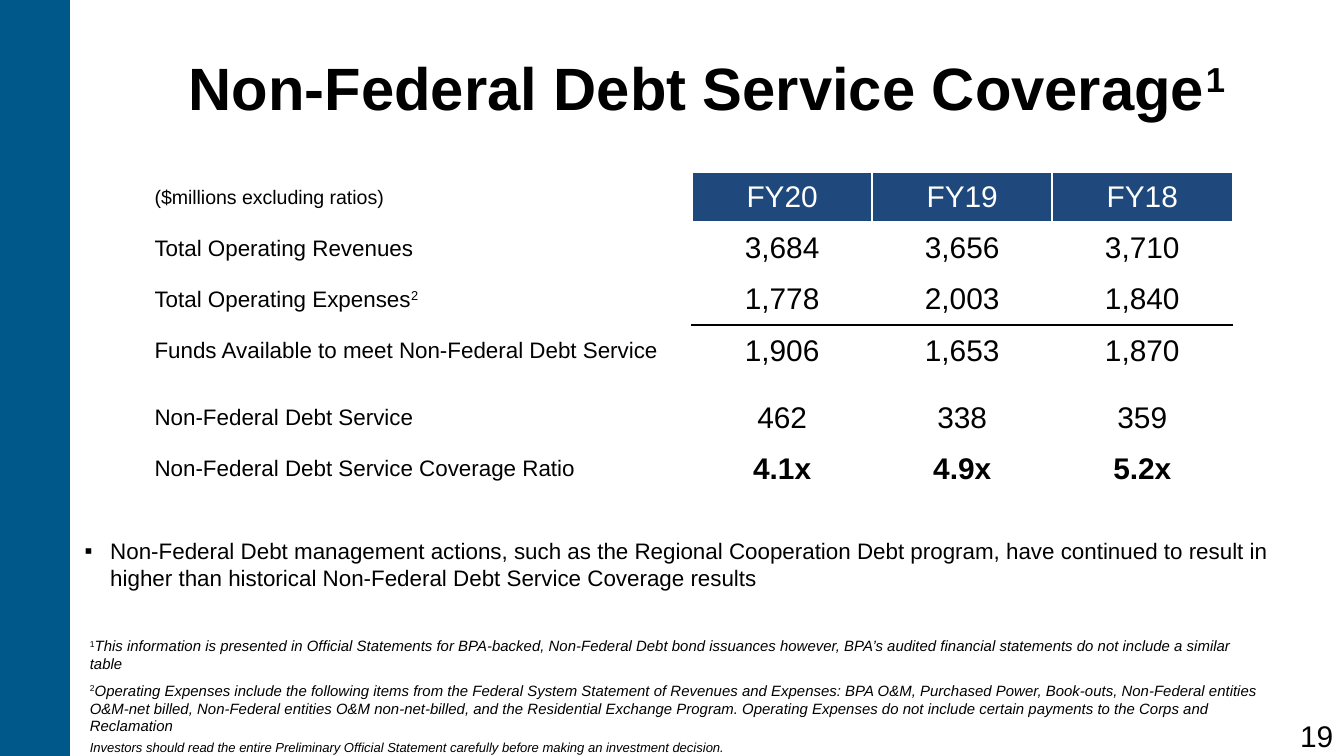
from lxml import etree
from pptx import Presentation
from pptx.dml.color import RGBColor
from pptx.enum.shapes import MSO_SHAPE
from pptx.enum.text import MSO_ANCHOR, MSO_AUTO_SIZE, PP_ALIGN
from pptx.oxml.ns import qn
from pptx.util import Inches, Pt

RECT = MSO_SHAPE.RECTANGLE
TOP, MID = MSO_ANCHOR.TOP, MSO_ANCHOR.MIDDLE
LEFT, MIDDLE, RIGHT = PP_ALIGN.LEFT, PP_ALIGN.CENTER, PP_ALIGN.RIGHT
FIXED = MSO_AUTO_SIZE.NONE

WIDE = 10
HIGH = WIDE * 9 / 16
HUES = {"bar": "00588A", "head": "1F497D", "ink": "000000", "paper": "FFFFFF"}

ROWS = [
    ("($millions excluding ratios)", "FY20", "FY19", "FY18"),
    ("Total Operating Revenues", "3,684", "3,656", "3,710"),
    ("Total Operating Expenses^2", "1,778", "2,003", "1,840"),
    ("Funds Available to meet Non-Federal Debt Service", "1,906", "1,653", "1,870"),
    None,
    ("Non-Federal Debt Service", "462", "338", "359"),
    ("Non-Federal Debt Service Coverage Ratio", "4.1x", "4.9x", "5.2x"),
]
HEAD, SUM, RATIO = 0, 2, 6

NOTES = [
    "^1^This information is presented in Official Statements for BPA-backed, "
    "Non-Federal Debt bond issuances however, BPA’s audited financial statements "
    "do not include a similar table",
    "^2^Operating Expenses include the following items from the Federal System "
    "Statement of Revenues and Expenses: BPA O&M, Purchased Power, Book-outs, "
    "Non-Federal entities O&M-net billed, Non-Federal entities O&M non-net-billed, "
    "and the Residential Exchange Program. Operating Expenses do not include "
    "certain payments to the Corps and Reclamation",
]
WARNING = ("Investors should read the entire Preliminary Official Statement "
           "carefully before making an investment decision.")
POINT = ("Non-Federal Debt management actions, such as the Regional Cooperation "
         "Debt program, have continued to result in higher than historical "
         "Non-Federal Debt Service Coverage results")


def tint(hue):
    return RGBColor.from_string(HUES[hue])


def apply(item, form):
    for name, value in form.items():
        setattr(item, name, value)


def write(para, text, size, hue="ink", align=LEFT, bold=False, italic=False):
    apply(para, {"alignment": align, "space_before": Pt(0)})
    for place, part in enumerate(text.split("^")):
        if not part:
            continue
        raised = place % 2 == 1
        run = para.add_run()
        run.text = part
        apply(run.font, {"name": "Arial", "size": Pt(size), "bold": bold,
                         "italic": italic and not raised})
        run.font.color.rgb = tint(hue)
        if raised:
            run._r.get_or_add_rPr().set("baseline", "30000")


def place(shape, box):
    apply(shape, dict(zip(("left", "top", "width", "height"), map(Inches, box))))


def frame(shape, anchor=TOP):
    apply(shape.text_frame, {"word_wrap": True, "auto_size": FIXED,
                             "vertical_anchor": anchor})
    return shape.text_frame


def add_text(slide, box):
    return frame(slide.shapes.add_textbox(*map(Inches, box)))


def add_bar(slide, box):
    bar = slide.shapes.add_shape(RECT, *map(Inches, box))
    bar.shadow.inherit = False
    bar.fill.solid()
    bar.fill.fore_color.rgb = tint("bar")
    bar.line.fill.background()


def add_title(slide, box):
    title = slide.shapes.title
    place(title, box)
    para = frame(title, MID).paragraphs[0]
    write(para, "Non-Federal Debt Service Coverage^1", 32, align=MIDDLE, bold=True)
    para.line_spacing = 0.9


def edge(cell, side, hue, width):
    line = etree.SubElement(cell._tc.get_or_add_tcPr(), qn("a:ln" + side),
                            w=str(Pt(width)))
    fill = etree.SubElement(line, qn("a:solidFill"))
    etree.SubElement(fill, qn("a:srgbClr"), val=HUES[hue])


def border(cell, row, col):
    over = "ink" if col and row == SUM + 1 else "paper"
    under = "ink" if col and row == SUM else "paper"
    edge(cell, "L", "paper", 1)
    edge(cell, "R", "paper", 1)
    edge(cell, "T", over, 3 if row == HEAD + 1 else 1)
    edge(cell, "B", under, 3 if row == HEAD else 1)


def fill_cell(cell, row, col):
    border(cell, row, col)
    head = row == HEAD and col > 0
    if head:
        cell.fill.solid()
        cell.fill.fore_color.rgb = tint("head")
    else:
        cell.fill.background()
    cell.vertical_anchor = MID
    para = cell.text_frame.paragraphs[0]
    if ROWS[row] is None:
        apply(cell, {"margin_top": 0, "margin_bottom": 0})
        etree.SubElement(para._p, qn("a:endParaRPr"), sz="600")
    elif col:
        write(para, ROWS[row][col], 16, "paper" if head else "ink", MIDDLE,
              bold=row == RATIO)
    else:
        write(para, ROWS[row][col], 10.5 if row == HEAD else 12)


def add_grid(slide, box):
    table = slide.shapes.add_table(len(ROWS), 4, *map(Inches, box)).table
    apply(table, {"first_row": False, "horz_banding": False})
    for col, width in enumerate((4.1, 1.34, 1.34, 1.34)):
        table.columns[col].width = Inches(width)
    for row, texts in enumerate(ROWS):
        table.rows[row].height = Inches(0.38 if texts else 0.12)
        for col in range(4):
            fill_cell(table.cell(row, col), row, col)


def add_point(slide, box):
    body = slide.placeholders[1]
    place(body, box)
    para = frame(body).paragraphs[0]
    form = para._p.get_or_add_pPr()
    form.set("marL", str(Inches(0.19)))
    form.set("indent", str(Inches(-0.19)))
    hue = etree.SubElement(form, qn("a:buClr"))
    etree.SubElement(hue, qn("a:srgbClr"), val=HUES["ink"])
    etree.SubElement(form, qn("a:buFont"), typeface="Arial")
    etree.SubElement(form, qn("a:buChar"), char="▪")
    write(para, POINT, 12)


def add_notes(slide, box):
    left, top, width, height = box
    text = add_text(slide, box)
    for rank, note in enumerate(NOTES):
        para = text.add_paragraph() if rank else text.paragraphs[0]
        write(para, note, 8, italic=True)
        if rank:
            para.space_before = Pt(4.6)
    last = add_text(slide, (left, top + 0.76, 5.03, 0.21))
    write(last.paragraphs[0], WARNING, 7, italic=True)


def add_page(slide, box):
    text = add_text(slide, box)
    apply(text, {"margin_left": Inches(0.07), "margin_right": Inches(0.07),
                 "margin_top": Inches(0.04), "margin_bottom": Inches(0.04)})
    write(text.paragraphs[0], "19", 16, align=RIGHT)


def main():
    deck = Presentation()
    apply(deck, {"slide_width": Inches(WIDE), "slide_height": Inches(HIGH)})
    slide = deck.slides.add_slide(deck.slide_layouts[1])
    add_bar(slide, (0, 0, 0.52, HIGH))
    add_title(slide, (0.52, 0.15, 9.48, 1.05))
    add_grid(slide, (1.05, 1.28, 8.12, 2.4))
    add_point(slide, (0.53, 3.95, 9.09, 0.5))
    add_notes(slide, (0.57, 4.69, 8.94, 0.94))
    add_page(slide, (9.56, 5.3, 0.43, 0.3))
    deck.save("out.pptx")


if __name__ == "__main__":
    main()
